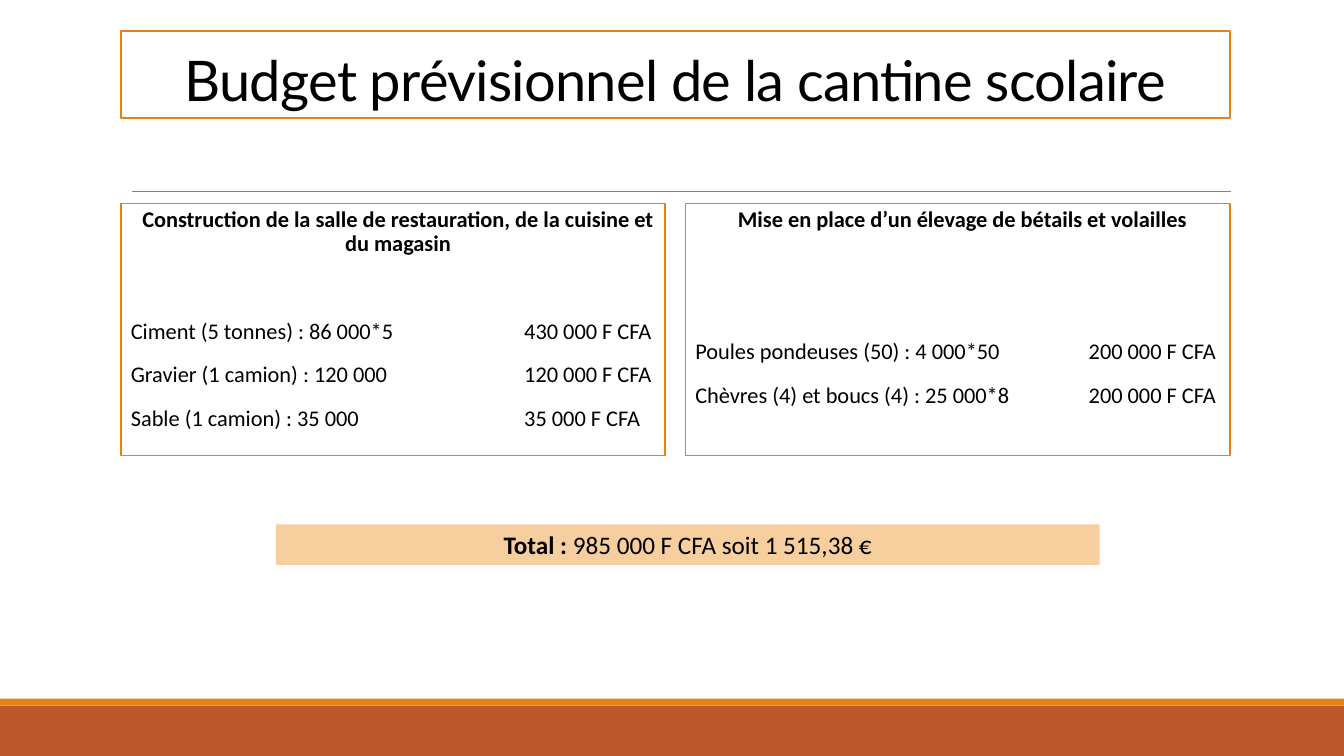
from lxml.etree import SubElement
from pptx import Presentation
from pptx.dml.color import RGBColor
from pptx.enum.shapes import MSO_CONNECTOR as CONN, MSO_SHAPE as SHAPE
from pptx.enum.text import MSO_ANCHOR as ANCHOR, PP_ALIGN as ALIGN
from pptx.oxml.ns import qn
from pptx.util import Pt


def rgb(value):
    return RGBColor.from_string(value)


def add_text(p, text, font="Calibri", size=16, color="000000", bold=False, spacing=None):
    r = p.add_run()
    r.text = text
    r.font.name = font
    r.font.size = Pt(size)
    r.font.bold = bold
    r.font.color.rgb = rgb(color)
    if spacing is not None:
        r._r.get_or_add_rPr().set("spc", str(round(spacing * 100)))


class BudgetSlide:
    """Holds the style and the current slide, and draws each kind of element."""

    white, orange, rust = "FFFFFF", "E48312", "BD582C"
    peach, gray = "F7CE9D", "808080"
    amount_tab = 281

    def __init__(self, prs):
        self.s = prs.slides.add_slide(prs.slide_layouts[6])

    def box(self, x, y, w, h, fill, line=None, anchor=ANCHOR.TOP, insets=(7.2, 3.6, 7.2, 3.6)):
        sp = self.s.shapes.add_shape(SHAPE.RECTANGLE, Pt(x), Pt(y), Pt(w), Pt(h))
        sp.shadow.inherit = False
        sp.fill.solid()
        sp.fill.fore_color.rgb = rgb(fill)
        if line:
            sp.line.color.rgb = rgb(line)
            sp.line.width = Pt(1.25)
        else:
            sp.line.fill.background()
        tf = sp.text_frame
        tf.word_wrap = True
        tf.vertical_anchor = anchor
        tf.margin_left, tf.margin_top, tf.margin_right, tf.margin_bottom = map(Pt, insets)
        tf.paragraphs[0].alignment = ALIGN.CENTER
        return tf

    def rule(self, x1, x2, y):
        line = self.s.shapes.add_connector(CONN.STRAIGHT, Pt(x1), Pt(y), Pt(x2), Pt(y))
        line.line.color.rgb = rgb(self.gray)
        line.line.width = Pt(0.5)
        SubElement(line._element.spPr, qn("a:effectLst"))

    def title(self, text):
        tf = self.box(86.4, 22.3, 792, 62, self.white, self.orange, ANCHOR.BOTTOM)
        p = tf.paragraphs[0]
        p.line_spacing = 0.85
        add_text(p, text, font="Lato", size=40, spacing=-0.5)

    def budget(self, x, heading, gap, items):
        tf = self.box(x, 145.4, 388.8, 180, self.white, self.orange, insets=(7.2, 3.6, 0, 3.6))
        p = tf.paragraphs[0]
        p.line_spacing = 0.9
        p.space_after = Pt(2)
        add_text(p, heading, bold=True)
        for i, (label, amount) in enumerate(items):
            p = tf.add_paragraph()
            p.alignment = ALIGN.LEFT
            p.line_spacing = 0.9
            p.space_before = Pt(12 if i else gap)
            p.space_after = Pt(2)
            tabs = SubElement(p._p.get_or_add_pPr(), qn("a:tabLst"))
            SubElement(tabs, qn("a:tab"), pos=str(Pt(self.amount_tab)), algn="l")
            add_text(p, f"{label}\t{amount} F CFA")

    def total(self, label, amount):
        tf = self.box(197.3, 374.6, 588.2, 29, self.peach)
        p = tf.paragraphs[0]
        add_text(p, label, size=18, bold=True)
        add_text(p, amount, size=18)


def main():
    prs = Presentation()
    prs.slide_width, prs.slide_height = Pt(960), Pt(540)
    slide = BudgetSlide(prs)
    slide.box(0, 504, 960, 36, slide.rust)
    slide.box(0, 499, 960, 5, slide.orange)
    slide.rule(94.3, 879, 136.8)
    slide.title("Budget prévisionnel de la cantine scolaire")
    budgets = [
        ("Construction de la salle de restauration, de la cuisine et du magasin", 43, [
            ("Ciment (5 tonnes) : 86 000*5", "430 000"),
            ("Gravier (1 camion) : 120 000", "120 000"),
            ("Sable (1 camion) : 35 000", "35 000"),
        ]),
        ("Mise en place d’un élevage de bétails et volailles", 75, [
            ("Poules pondeuses (50) : 4 000*50", "200 000"),
            ("Chèvres (4) et boucs (4) : 25 000*8", "200 000"),
        ]),
    ]
    for i, (heading, gap, items) in enumerate(budgets):
        slide.budget(86.4 + i * 403.2, heading, gap, items)
    slide.total("Total :", " 985 000 F CFA soit 1 515,38 €")
    prs.save("out.pptx")


if __name__ == "__main__":
    main()
